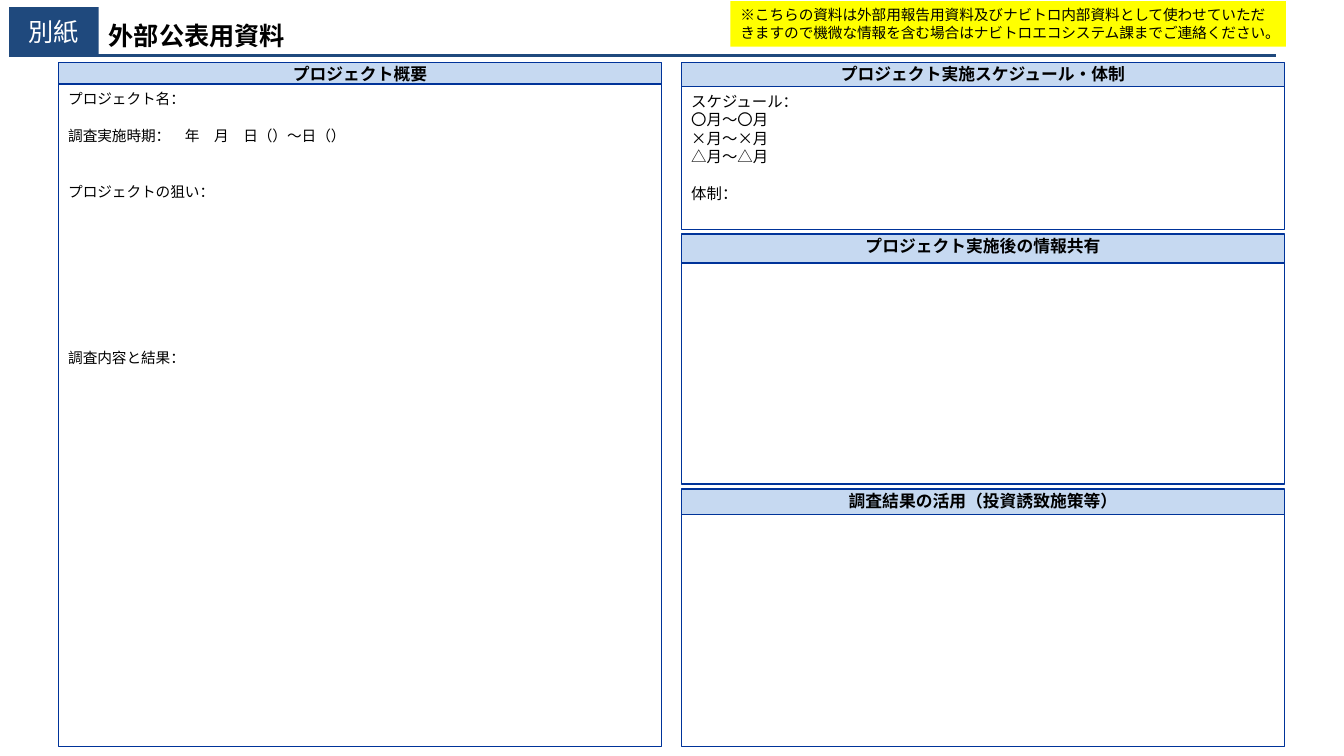
from lxml.etree import SubElement
from pptx import Presentation
from pptx.dml.color import RGBColor
from pptx.enum.shapes import MSO_CONNECTOR, MSO_SHAPE
from pptx.enum.text import MSO_ANCHOR, MSO_AUTO_SIZE, PP_ALIGN
from pptx.oxml.ns import qn
from pptx.util import Cm, Pt

NAVY = RGBColor(0x1F, 0x49, 0x7D)
BLUE = RGBColor(0x00, 0x33, 0x99)
PALE = RGBColor(0xC6, 0xD9, 0xF1)
YELLOW = RGBColor(0xFF, 0xFF, 0x00)
WHITE = RGBColor(0xFF, 0xFF, 0xFF)
BLACK = RGBColor(0, 0, 0)
FONT = "Noto Sans CJK JP"
PITCH = 13.2


def write(shape, lines, size=12, color=BLACK, bold=False, font=FONT,
          align=PP_ALIGN.LEFT, anchor=MSO_ANCHOR.TOP, pitch=None, top=0.13):
    """Fill a shape with (text, lines of gap above) pairs in one format."""
    frame = shape.text_frame
    frame.word_wrap = True
    frame.auto_size = MSO_AUTO_SIZE.NONE
    frame.vertical_anchor = anchor
    frame.margin_left = frame.margin_right = Cm(0.25)
    frame.margin_top, frame.margin_bottom = Cm(top), Cm(0.13)
    for i, (text, gap) in enumerate(lines):
        para = frame.paragraphs[0] if i == 0 else frame.add_paragraph()
        para.alignment = align
        para.space_before = Pt(gap * PITCH)
        if pitch:
            para.line_spacing = Pt(pitch)
        run = para.add_run()
        run.text = text
        run.font.size, run.font.bold = Pt(size), bold
        run.font.name = font
        run.font.color.rgb = color
        SubElement(run.font._element, qn("a:ea"), typeface=font)


def block(slide, x, y, w, h, fill, line=None):
    """Add a flat rectangle."""
    shape = slide.shapes.add_shape(MSO_SHAPE.RECTANGLE, Cm(x), Cm(y), Cm(w), Cm(h))
    shape.shadow.inherit = False
    shape.fill.solid()
    shape.fill.fore_color.rgb = fill
    if line:
        shape.line.color.rgb = line
        shape.line.width = Pt(1)
    else:
        shape.line.fill.background()
    return shape


def panel(slide, x, y, w, h, head, name, lines=(), size=11):
    """Place a framed body under a tinted heading."""
    body = block(slide, x, y + head, w, h - head, WHITE, BLUE)
    if lines:
        write(body, lines, size=size, pitch=PITCH)
    bar = block(slide, x, y, w, head, PALE, BLUE)
    write(bar, [(name, 0)], bold=True, align=PP_ALIGN.CENTER, top=0.04)


def banner(slide, x, y, w, h):
    """Place the tag, title, rule and notice across the top."""
    rule = slide.shapes.add_connector(
        MSO_CONNECTOR.STRAIGHT, Cm(x), Cm(y + h), Cm(x + w), Cm(y + h))
    rule.line.color.rgb = NAVY
    rule.line.width = Pt(2)
    SubElement(rule._element.spPr, qn("a:effectLst"))

    tag = block(slide, x, y, 2.26, h, NAVY)
    write(tag, [("別紙", 0)], size=18, color=WHITE,
          align=PP_ALIGN.CENTER, anchor=MSO_ANCHOR.MIDDLE)

    title = slide.shapes.title
    title.left, title.top = Cm(x + 2.26), Cm(y + 0.03)
    title.width, title.height = Cm(22.5), Cm(1.35)
    write(title, [("外部公表用資料", 0)], size=18, bold=True,
          anchor=MSO_ANCHOR.MIDDLE, pitch=22)

    note = block(slide, x + 18.18, y - 0.15, 14, 1.15, YELLOW)
    text = ("※こちらの資料は外部用報告用資料及びナビトロ内部資料として使わせていただ"
            "きますので機微な情報を含む場合はナビトロエコシステム課までご連絡ください。")
    write(note, [(text, 0)], size=10.5, font="Calibri")


def main():
    """Build and save the slide."""
    deck = Presentation()
    deck.slide_width, deck.slide_height = Cm(33.87), Cm(19.05)
    slide = deck.slides.add_slide(deck.slide_layouts[5])
    wide, top, end = 15.21, 1.57, 18.82
    left, right = 1.47, 17.17

    panel(slide, left, top, wide, end - top, 0.55, "プロジェクト概要", [
        ("プロジェクト名：", 0),
        ("調査実施時期：　年　月　日（）～日（）", 1),
        ("プロジェクトの狙い：", 2),
        ("調査内容と結果：", 8),
    ], size=10.5)
    panel(slide, right, top, wide, 4.22, 0.61, "プロジェクト実施スケジュール・体制", [
        ("スケジュール：", 0),
        ("〇月～〇月", 0),
        ("×月～×月", 0),
        ("△月～△月", 0),
        ("体制：", 1),
    ])
    panel(slide, right, 5.9, wide, 6.3, 0.73, "プロジェクト実施後の情報共有")
    panel(slide, right, 12.32, wide, end - 12.32, 0.64,
          "調査結果の活用（投資誘致施策等）")
    banner(slide, 0.23, 0.18, 31.93, 1.22)
    deck.save("out.pptx")


if __name__ == "__main__":
    main()
